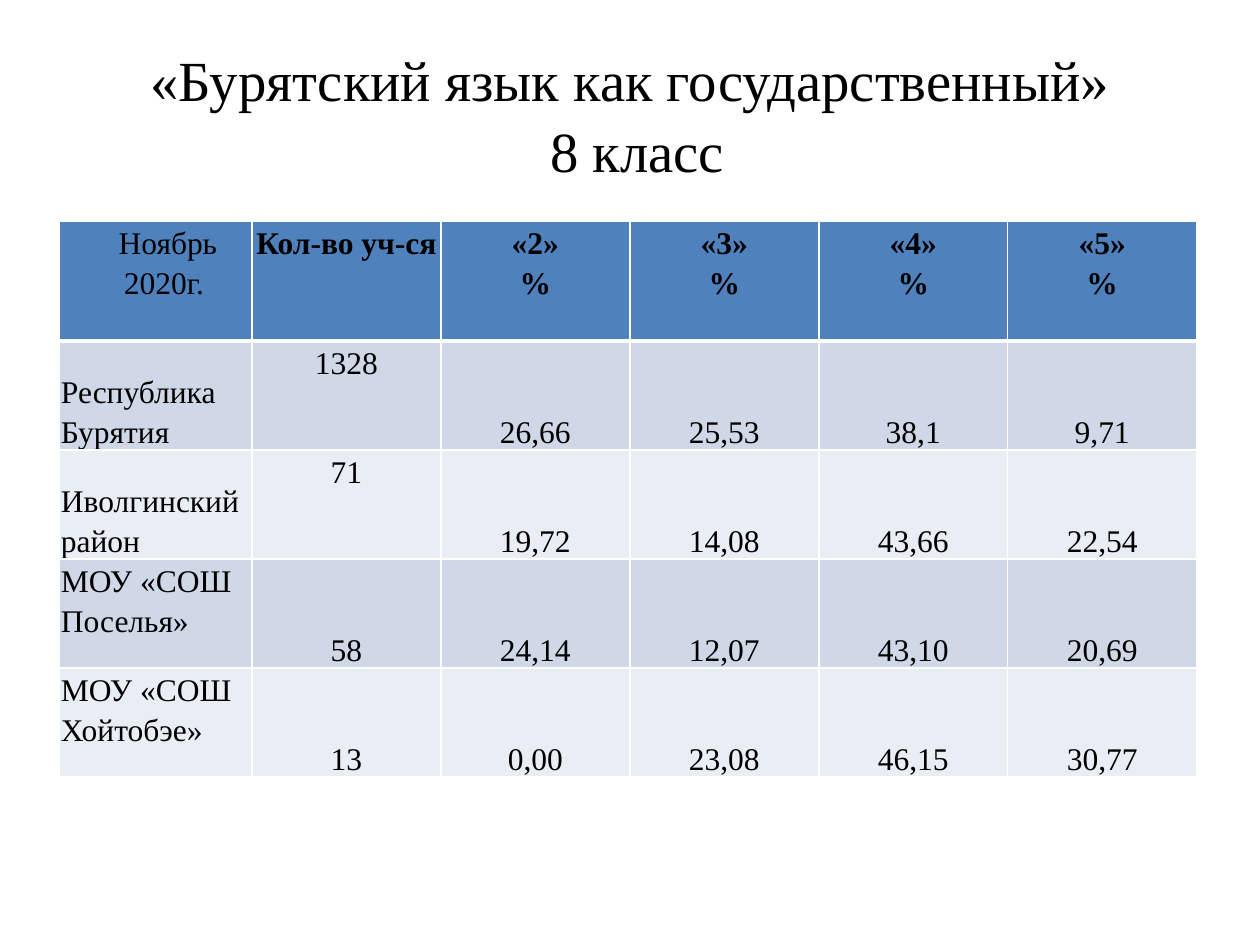
from dataclasses import dataclass

from lxml.etree import SubElement
from pptx import Presentation
from pptx.dml.color import RGBColor
from pptx.enum.text import MSO_ANCHOR as Anchor, MSO_AUTO_SIZE as AutoSize, PP_ALIGN as Align
from pptx.oxml.ns import qn
from pptx.util import Pt

EMU_PER_PX = 914400 // 126


@dataclass(frozen=True)
class Theme:
    font: str = "Times New Roman"
    text: str = "000000"
    header: str = "4F81BD"
    bands: tuple = ("D0D8E8", "E9EDF4")
    border: str = "FFFFFF"
    title_size: float = 32.4
    table_size: float = 18
    thin: float = 1
    thick: float = 3


THEME = Theme()

HEADER = ["Ноябрь 2020г. ", "Кол-во уч-ся"] + [f"«{grade}»\n%" for grade in range(2, 6)]
RESULTS = [
    ["Республика Бурятия", "1328", "26,66", "25,53", "38,1", "9,71"],
    ["Иволгинский район", "71", "19,72", "14,08", "43,66", "22,54"],
    ["МОУ «СОШ Поселья»", "58", "24,14", "12,07", "43,10", "20,69"],
    ["МОУ «СОШ Хойтобэе»", "13", "0,00", "23,08", "46,15", "30,77"],
]
TOP_ANCHORED_COLUMN = [1, 1, 0, 0]


def px(length):
    return length * EMU_PER_PX


def write_text(text_frame, text, size, bold=False, align=Align.CENTER, spacing=1.0, indent=0):
    text_frame.text = text
    for paragraph in text_frame.paragraphs:
        paragraph.alignment = align
        paragraph.line_spacing = spacing
        if indent:
            properties = paragraph._p.get_or_add_pPr()
            properties.set("marL", str(px(indent)))
            properties.set("indent", "0")
        for run in paragraph.runs:
            font = run.font
            font.name = THEME.font
            font.size = Pt(size)
            font.bold = bold
            font.color.rgb = RGBColor.from_string(THEME.text)


def add_title(slide, text):
    title = slide.shapes.title
    title.left, title.top, title.width, title.height = map(px, (63, 38, 1134, 158))
    frame = title.text_frame
    frame.auto_size = AutoSize.NONE
    frame.vertical_anchor = Anchor.MIDDLE
    frame.margin_bottom = px(14)
    write_text(frame, text, THEME.title_size, spacing=1.04)


def set_borders(cell, top, bottom):
    properties = cell._tc.get_or_add_tcPr()
    widths = {"lnL": THEME.thin, "lnR": THEME.thin, "lnT": top, "lnB": bottom}
    for side, width in widths.items():
        line = SubElement(properties, qn(f"a:{side}"), w=str(Pt(width)))
        fill = SubElement(line, qn("a:solidFill"))
        SubElement(fill, qn("a:srgbClr"), val=THEME.border)


def format_cell(cell, text, fill, anchor, top, bottom, **text_format):
    cell.margin_left = cell.margin_right = px(2)
    cell.margin_top = cell.margin_bottom = 0
    cell.vertical_anchor = anchor
    set_borders(cell, top, bottom)
    cell.fill.solid()
    cell.fill.fore_color.rgb = RGBColor.from_string(fill)
    write_text(cell.text_frame, text, THEME.table_size, spacing=1.15, **text_format)


def add_results_table(slide):
    widths = [193] + [189] * 5
    heights = [120] + [109] * 4
    frame = slide.shapes.add_table(
        len(heights), len(widths), px(59), px(221), px(sum(widths)), px(sum(heights))
    )
    table = frame.table
    for column, width in zip(table.columns, widths):
        column.width = px(width)
    for row, height in zip(table.rows, heights):
        row.height = px(height)

    for column, text in enumerate(HEADER):
        format_cell(
            table.cell(0, column), text, THEME.header, Anchor.TOP, THEME.thin, THEME.thick,
            bold=column > 0, indent=0 if column else 25,
        )
    for index, (values, top_column) in enumerate(zip(RESULTS, TOP_ANCHORED_COLUMN)):
        for column, text in enumerate(values):
            format_cell(
                table.cell(index + 1, column), text, THEME.bands[index % 2],
                Anchor.TOP if column == top_column else Anchor.BOTTOM,
                THEME.thin if index else THEME.thick, THEME.thin,
                align=Align.CENTER if column else Align.LEFT,
            )


def main():
    presentation = Presentation()
    presentation.slide_width, presentation.slide_height = px(1260), px(945)
    slide = presentation.slides.add_slide(presentation.slide_layouts[5])
    add_title(slide, "«Бурятский язык как государственный»\n 8 класс")
    add_results_table(slide)
    presentation.save("out.pptx")


if __name__ == "__main__":
    main()
